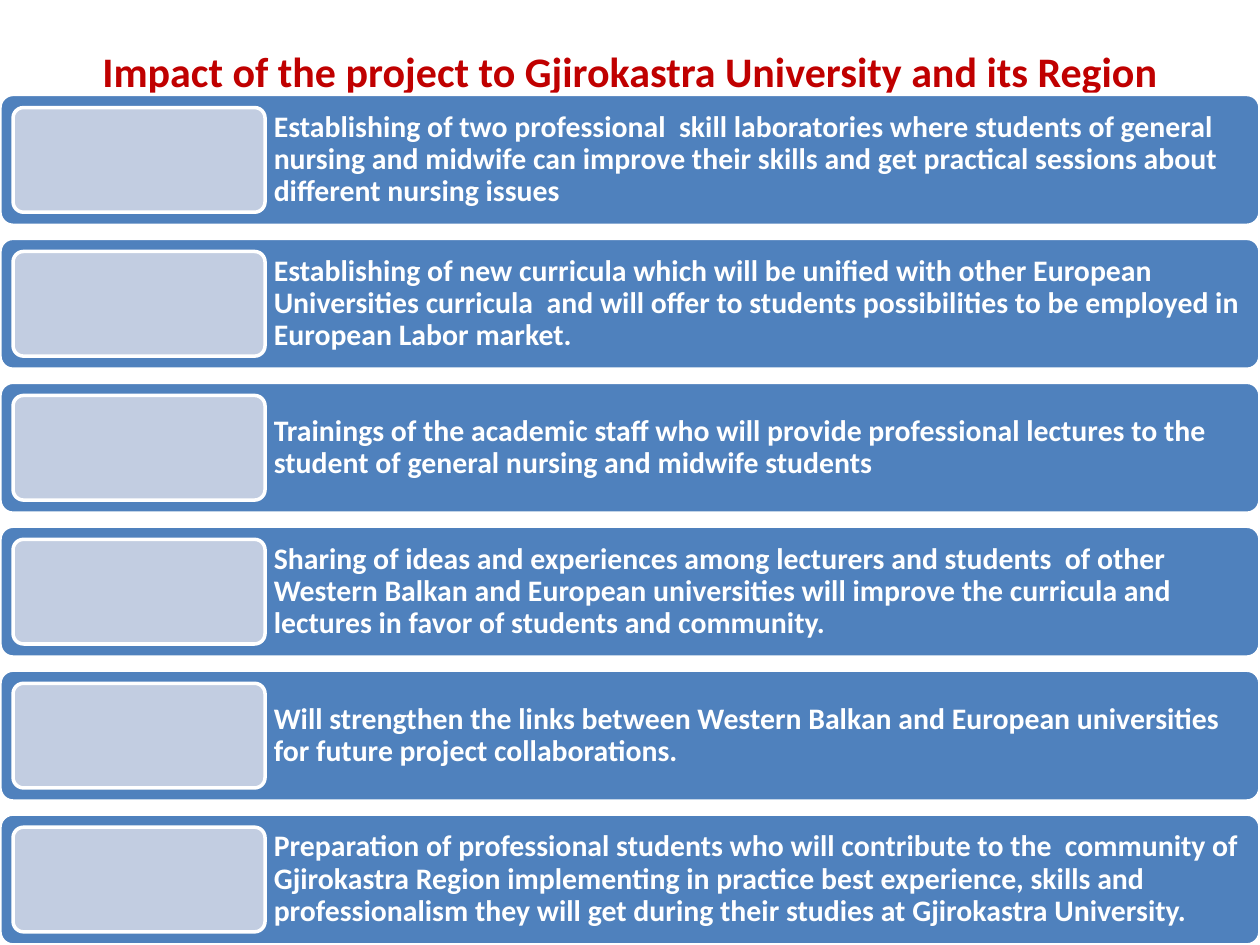
from dataclasses import dataclass

from pptx import Presentation
from pptx.dml.color import RGBColor
from pptx.enum import shapes, text
from pptx.util import Pt


@dataclass(frozen=True)
class Theme:
    """Colours, font and type sizes of the slide."""
    font: str = "Calibri"
    title: str = "C00000"
    bar: str = "4F81BD"
    panel: str = "C2CDE1"
    light: str = "FFFFFF"
    title_size: float = 24
    impact_size: float = 17
    outline: float = 2
    corner: float = 0.1


THEME = Theme()
WIDTH, HEIGHT = 720, 540
BARS_TOP = 54
GAP_RATIO = 0.1
PANEL_WIDTH = 144

TITLE = "Impact of the project to Gjirokastra University and its Region"
IMPACTS = [
    "Establishing of two professional  skill laboratories where students of general nursing and midwife "
    "can improve their skills and get practical sessions about different nursing issues",
    "Establishing of new curricula which will be unified with other European Universities curricula  and "
    "will offer to students possibilities to be employed in European Labor market.",
    "Trainings of the academic staff who will provide professional lectures to the student of general "
    "nursing and midwife students",
    "Sharing of ideas and experiences among lecturers and students  of other Western Balkan and European "
    "universities will improve the curricula and lectures in favor of students and community.",
    "Will strengthen the links between Western Balkan and European universities for future project "
    "collaborations.",
    "Preparation of professional students who will contribute to the  community of Gjirokastra Region "
    "implementing in practice best experience, skills and professionalism they will get during their "
    "studies at Gjirokastra University.",
]


def apply(target, formats):
    """Set every attribute named in formats on target."""
    for name, value in formats.items():
        setattr(target, name, value)


def add_rounded(slide, box, fill):
    """Add a rounded rectangle with the white outline."""
    rounded = slide.shapes.add_shape(
        shapes.MSO_SHAPE.ROUNDED_RECTANGLE, *map(Pt, box))
    rounded.adjustments[0] = THEME.corner
    rounded.shadow.inherit = False
    rounded.fill.solid()
    rounded.fill.fore_color.rgb = RGBColor.from_string(fill)
    rounded.line.color.rgb = RGBColor.from_string(THEME.light)
    rounded.line.width = Pt(THEME.outline)


def add_label(slide, box, wording, size, color, inset, paragraph_format):
    """Add bold, vertically centred text that wraps in its box."""
    frame = slide.shapes.add_textbox(*map(Pt, box)).text_frame
    sides = ("left", "top", "right", "bottom")
    apply(frame, {f"margin_{side}": Pt(inset) for side in sides})
    apply(frame, {"word_wrap": True, "vertical_anchor": text.MSO_ANCHOR.MIDDLE})
    paragraph = frame.paragraphs[0]
    apply(paragraph, paragraph_format)
    run = paragraph.add_run()
    run.text = wording
    apply(run.font, {"name": THEME.font, "size": Pt(size), "bold": True})
    run.font.color.rgb = RGBColor.from_string(color)


def add_impact(slide, top, height, wording):
    """Add one bar with its text and the pale panel on its left."""
    inset = height * GAP_RATIO
    text_left = inset + PANEL_WIDTH
    add_rounded(slide, (0, top, WIDTH, height), THEME.bar)
    add_label(slide, (text_left, top, WIDTH - text_left, height), wording,
              THEME.impact_size, THEME.light, 5,
              {"alignment": text.PP_ALIGN.LEFT, "line_spacing": 0.9})
    add_rounded(slide, (inset, top + inset, PANEL_WIDTH, height - 2 * inset),
                THEME.panel)


def main():
    """Build the slide and save it."""
    deck = Presentation()
    apply(deck, {"slide_width": Pt(WIDTH), "slide_height": Pt(HEIGHT)})
    slide = deck.slides.add_slide(deck.slide_layouts[6])
    add_label(slide, (36, 21.6, 648, 38.16), TITLE, THEME.title_size,
              THEME.title, 4, {"alignment": text.PP_ALIGN.CENTER})
    count = len(IMPACTS)
    height = (HEIGHT - BARS_TOP) / (count + (count - 1) * GAP_RATIO)
    for row, wording in enumerate(IMPACTS):
        top = BARS_TOP + row * height * (1 + GAP_RATIO)
        add_impact(slide, top, height, wording)
    deck.save("out.pptx")


if __name__ == "__main__":
    main()
